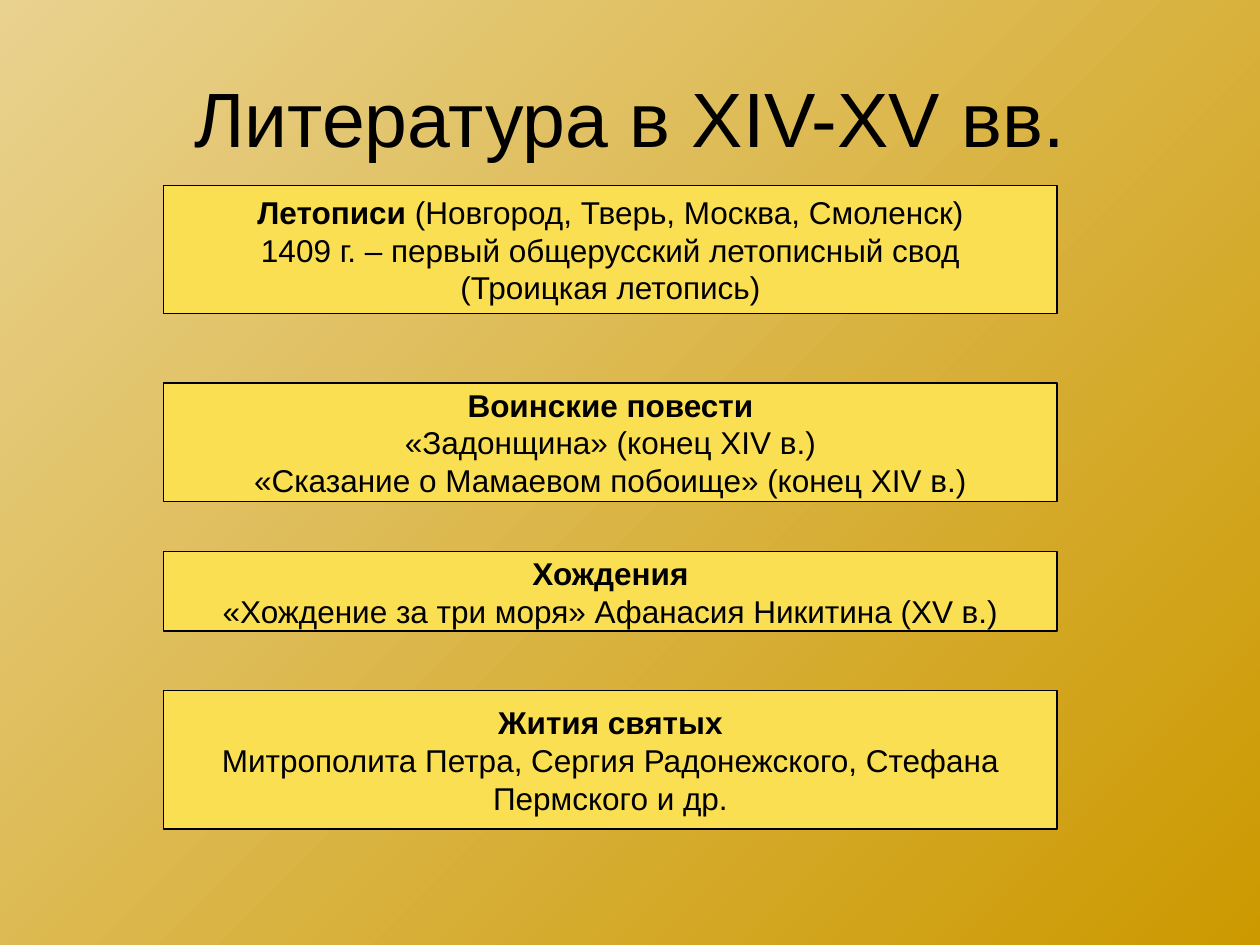
from pptx import Presentation
from pptx.dml.color import RGBColor
from pptx.enum.shapes import MSO_SHAPE
from pptx.enum.text import MSO_ANCHOR, PP_ALIGN
from pptx.util import Inches, Pt

COLORS = {
    "light": "E9D28F",
    "dark": "CC9900",
    "box": "FBDF53",
    "ink": "000000",
}
BOX_LEFT, BOX_WIDTH = 1.3, 7.09

# top, height, heading, rest of the heading line, further lines
GENRES = [
    (1.47, 1.02, "Летописи", " (Новгород, Тверь, Москва, Смоленск)",
     ["1409 г. – первый общерусский летописный свод", "(Троицкая летопись)"]),
    (3.04, 0.94, "Воинские повести", "",
     ["«Задонщина» (конец XIV в.)",
      "«Сказание о Мамаевом побоище» (конец XIV в.)"]),
    (4.38, 0.63, "Хождения", "",
     ["«Хождение за три моря» Афанасия Никитина (ХV в.)"]),
    (5.48, 1.1, "Жития святых", "",
     ["Митрополита Петра, Сергия Радонежского, Стефана", "Пермского и др."]),
]


def rgb(name):
    return RGBColor.from_string(COLORS[name])


class LiteratureSlide:
    font_name = "Arial"
    title_size = 44
    text_size = 18

    def __init__(self, deck):
        self.slide = deck.slides.add_slide(deck.slide_layouts[5])

    def background(self):
        fill = self.slide.background.fill
        fill.gradient()
        fill.gradient_angle = 315
        for stop, name in zip(fill.gradient_stops, ("light", "dark")):
            stop.color.rgb = rgb(name)

    def format(self, paragraph, size):
        paragraph.alignment = PP_ALIGN.CENTER
        font = paragraph.font
        font.name, font.size = self.font_name, Pt(size)
        font.color.rgb = rgb("ink")

    def title(self, text):
        title = self.slide.shapes.title
        title.left, title.top = Inches(0.5), Inches(0.3)
        title.width, title.height = Inches(9), Inches(1.25)
        title.text_frame.text = text
        title.text_frame.vertical_anchor = MSO_ANCHOR.MIDDLE
        self.format(title.text_frame.paragraphs[0], self.title_size)

    def genre_box(self, top, height, heading, rest, lines):
        box = self.slide.shapes.add_shape(
            MSO_SHAPE.RECTANGLE, Inches(BOX_LEFT), Inches(top),
            Inches(BOX_WIDTH), Inches(height))
        box.shadow.inherit = False
        box.fill.solid()
        box.fill.fore_color.rgb = rgb("box")
        box.line.color.rgb = rgb("ink")
        box.line.width = Pt(0.75)

        frame = box.text_frame
        frame.word_wrap = False
        frame.vertical_anchor = MSO_ANCHOR.MIDDLE
        first = frame.paragraphs[0]
        heading_run = first.add_run()
        heading_run.text = heading
        heading_run.font.bold = True
        if rest:
            first.add_run().text = rest
        for line in lines:
            frame.add_paragraph().text = line
        for paragraph in frame.paragraphs:
            self.format(paragraph, self.text_size)


def main():
    deck = Presentation()
    deck.slide_width, deck.slide_height = Inches(10), Inches(7.5)
    page = LiteratureSlide(deck)
    page.background()
    page.title("Литература в XIV-XV вв.")
    for genre in GENRES:
        page.genre_box(*genre)
    deck.save("out.pptx")


if __name__ == "__main__":
    main()
